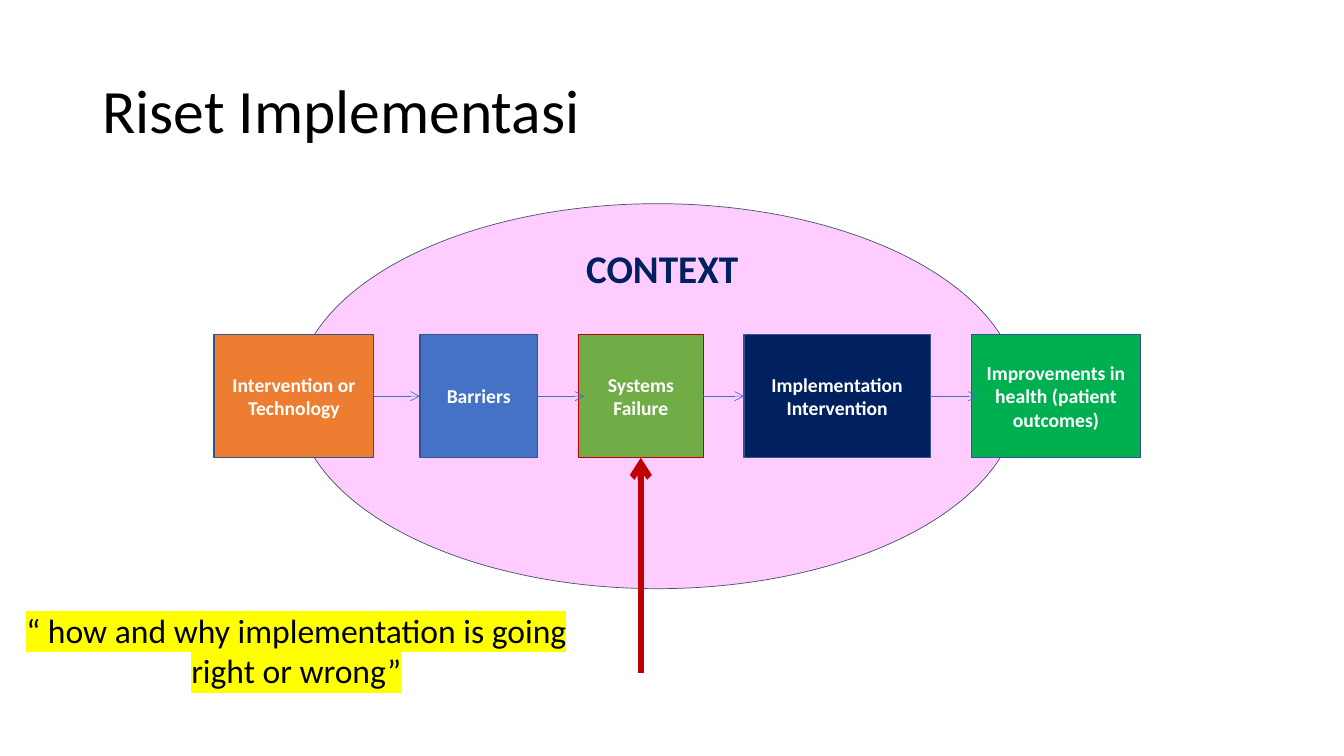
from lxml import etree
from pptx import Presentation
from pptx.dml.color import RGBColor
from pptx.enum import shapes, text
from pptx.oxml import ns
from pptx.util import Pt

BOX_TOP, BOX_HEIGHT = 239, 88
OVERSHOOT = 4.5
STEPS = [
    ("Intervention or Technology", 153, 114, "ED7D31", "325491"),
    ("Barriers", 300, 84, "4472C4", "325491"),
    ("Systems Failure", 413, 89.5, "70AD47", "C00000"),
    ("Implementation Intervention", 531.5, 133, "002060", "325491"),
    ("Improvements in health (patient outcomes)", 694, 120.5, "00B050", "325491"),
]


def rgb(value):
    """Return the colour for a hex string."""
    return RGBColor.from_string(value)


def write(sp, content, size, color, bold=False, align=text.PP_ALIGN.CENTER,
          anchor=text.MSO_ANCHOR.MIDDLE):
    """Put one formatted paragraph into a shape and return it."""
    tf = sp.text_frame
    tf.word_wrap = True
    tf.vertical_anchor = anchor
    p = tf.paragraphs[0]
    p.text = content
    p.alignment = align
    font = p.runs[0].font
    font.name, font.size, font.bold = "Calibri", Pt(size), bold
    font.color.rgb = rgb(color)
    return p


def add_shape(s, kind, x, y, w, h, fill, line, weight):
    """Add a filled and outlined preset shape."""
    sp = s.shapes.add_shape(kind, Pt(x), Pt(y), Pt(w), Pt(h))
    sp.shadow.inherit = False
    sp.fill.solid()
    sp.fill.fore_color.rgb = rgb(fill)
    sp.line.color.rgb = rgb(line)
    sp.line.width = Pt(weight)
    return sp


def add_text(s, x, y, w, h, content, size, color, **options):
    """Add a text box and return its paragraph."""
    sp = s.shapes.add_textbox(Pt(x), Pt(y), Pt(w), Pt(h))
    return write(sp, content, size, color, **options)


def add_arrow(s, x1, y1, x2, y2, color, weight):
    """Add a straight connector with an open arrowhead at its end."""
    line = s.shapes.add_connector(
        shapes.MSO_CONNECTOR.STRAIGHT, Pt(x1), Pt(y1), Pt(x2), Pt(y2))
    line.line.color.rgb = rgb(color)
    line.line.width = Pt(weight)
    ln = line._element.spPr.find(ns.qn("a:ln"))
    etree.SubElement(ln, ns.qn("a:tailEnd"), type="arrow")
    etree.SubElement(line._element.spPr, ns.qn("a:effectLst"))
    return line


def highlight(p, color):
    """Mark the first run of a paragraph with a background colour."""
    mark = etree.Element(ns.qn("a:highlight"))
    etree.SubElement(mark, ns.qn("a:srgbClr"), val=color)
    p.runs[0]._r.rPr.find(ns.qn("a:solidFill")).addnext(mark)


def add_steps(s):
    """Add the row of boxes with the arrows between them."""
    boxes = []
    for label, x, w, fill, line in STEPS:
        box = add_shape(s, shapes.MSO_SHAPE.RECTANGLE, x, BOX_TOP, w, BOX_HEIGHT,
                        fill, line, 1)
        write(box, label, 14, "FFFFFF", bold=True)
        boxes.append(box)
    middle = BOX_TOP + BOX_HEIGHT / 2
    for i, (start, end) in enumerate(zip(boxes, boxes[1:])):
        reach = OVERSHOOT if i % 2 else 0
        arrow = add_arrow(s, start.left.pt + start.width.pt, middle,
                          end.left.pt + reach, middle, "4472C4", 0.5)
        arrow.begin_connect(start, 3)
        if not reach:
            arrow.end_connect(end, 1)
    return boxes


def main():
    """Build the slide and save it."""
    prs = Presentation()
    prs.slide_width, prs.slide_height = Pt(960), Pt(540)
    s = prs.slides.add_slide(prs.slide_layouts[6])

    add_shape(s, shapes.MSO_SHAPE.OVAL, 211, 145.5, 517, 275, "FFCCFF", "44546A", 0.5)
    add_text(s, 373, 171, 200, 41, "CONTEXT", 28, "002060", bold=True)
    title = add_text(s, 66, 29, 828, 104.5, "Riset Implementasi", 44, "000000",
                     align=text.PP_ALIGN.LEFT)
    title.line_spacing = 0.9

    failure = add_steps(s)[2]
    center = failure.left.pt + failure.width.pt / 2
    arrow = add_arrow(s, center, 481, center, BOX_TOP + BOX_HEIGHT, "C00000", 4.5)
    arrow.end_connect(failure, 2)

    quote = add_text(s, 0, 432, 423.5, 65.5,
                     "“ how and why implementation is going right or wrong”",
                     24, "000000", anchor=text.MSO_ANCHOR.TOP)
    highlight(quote, "FFFF00")
    prs.save("out.pptx")


if __name__ == "__main__":
    main()
